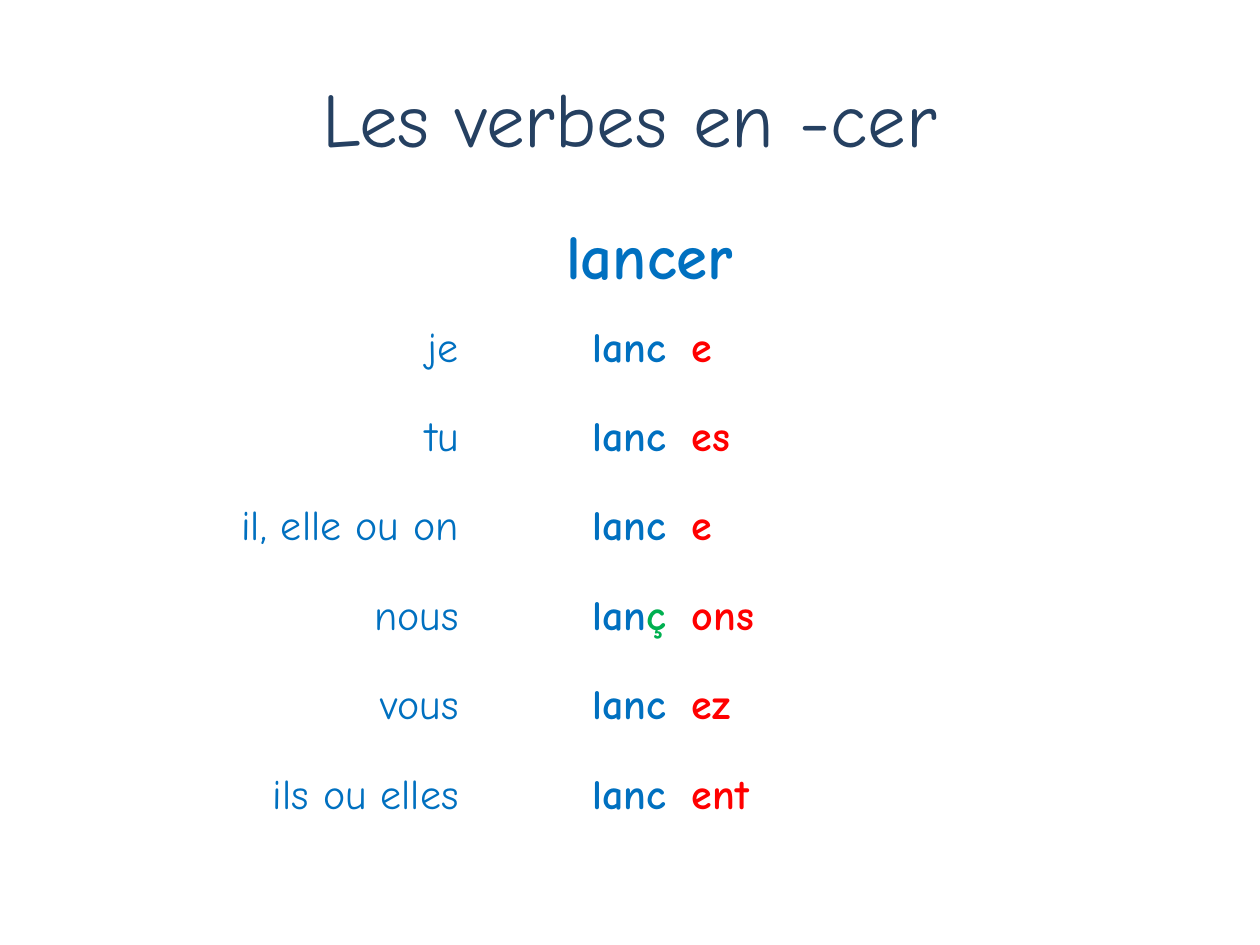
from dataclasses import dataclass

from pptx import Presentation
from pptx.dml.color import RGBColor
from pptx.enum import text as t
from pptx.util import Inches, Pt


@dataclass(frozen=True)
class Theme:
    font: str = "Comic Neue"
    navy: str = "254061"
    blue: str = "0070C0"
    red: str = "FF0000"
    green: str = "00B050"
    white: str = "FFFFFF"
    title: int = 44
    head: int = 36
    body: int = 24


theme = Theme()
LEFT, MID, RIGHT = t.PP_ALIGN.LEFT, t.PP_ALIGN.CENTER, t.PP_ALIGN.RIGHT


def write(frame, words, color=theme.blue, size=theme.body, bold=False, align=LEFT):
    """Add a run to the first paragraph of the frame and format it."""
    para = frame.paragraphs[0]
    para.alignment = align
    run = para.add_run()
    run.text = words
    run.font.name = theme.font
    run.font.size = Pt(size)
    run.font.bold = bold
    run.font.color.rgb = RGBColor.from_string(color)


deck = Presentation()
deck.slide_width, deck.slide_height = Inches(10), Inches(7.5)
slide = deck.slides.add_slide(deck.slide_layouts[5])

title = slide.shapes.title
title.left, title.top = Inches(0.5), Inches(0.3)
title.width, title.height = Inches(9), Inches(1.25)
title.text_frame.vertical_anchor = t.MSO_ANCHOR.MIDDLE
write(title.text_frame, "Les verbes en -cer", color=theme.navy, size=theme.title, align=MID)

# Pronoun, stem, changed letter of the stem, ending
forms = [
    ("je", "lanc", "", "e"),
    ("tu", "lanc", "", "es"),
    ("il, elle ou on", "lanc", "", "e"),
    ("nous", "lan", "ç", "ons"),
    ("vous", "lanc", "", "ez"),
    ("ils ou elles", "lanc", "", "ent"),
]
widths = [2.52, 1.65, 3.7]
rows = len(forms) + 1
grid = slide.shapes.add_table(
    rows, len(widths), Inches(1.22), Inches(1.7), Inches(sum(widths)), Inches(0.71 * rows)
).table
for col, width in zip(grid.columns, widths):
    col.width = Inches(width)
for cell in grid.iter_cells():
    cell.fill.solid()
    cell.fill.fore_color.rgb = RGBColor.from_string(theme.white)
    cell.vertical_anchor = t.MSO_ANCHOR.MIDDLE

head = grid.cell(0, 0)
head.merge(grid.cell(0, 2))
write(head.text_frame, "lancer", size=theme.head, bold=True, align=MID)

for row, (who, stem, change, ending) in enumerate(forms, start=1):
    subject, verb, tail = (grid.cell(row, col).text_frame for col in range(3))
    write(subject, who, align=RIGHT)
    write(verb, stem, bold=True, align=RIGHT)
    if change:
        write(verb, change, color=theme.green, bold=True, align=RIGHT)
    write(tail, ending, color=theme.red, bold=True)

deck.save("out.pptx")
